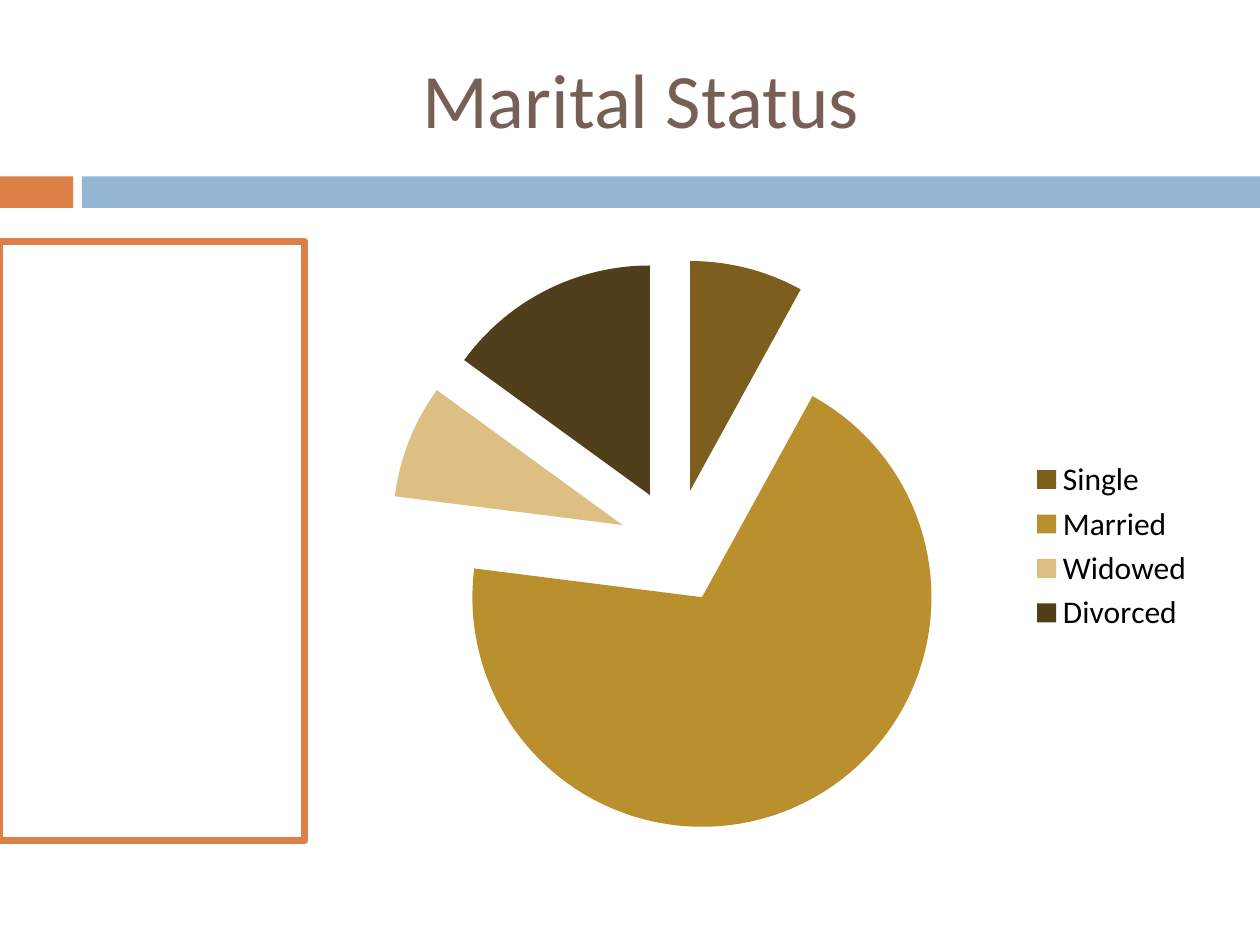
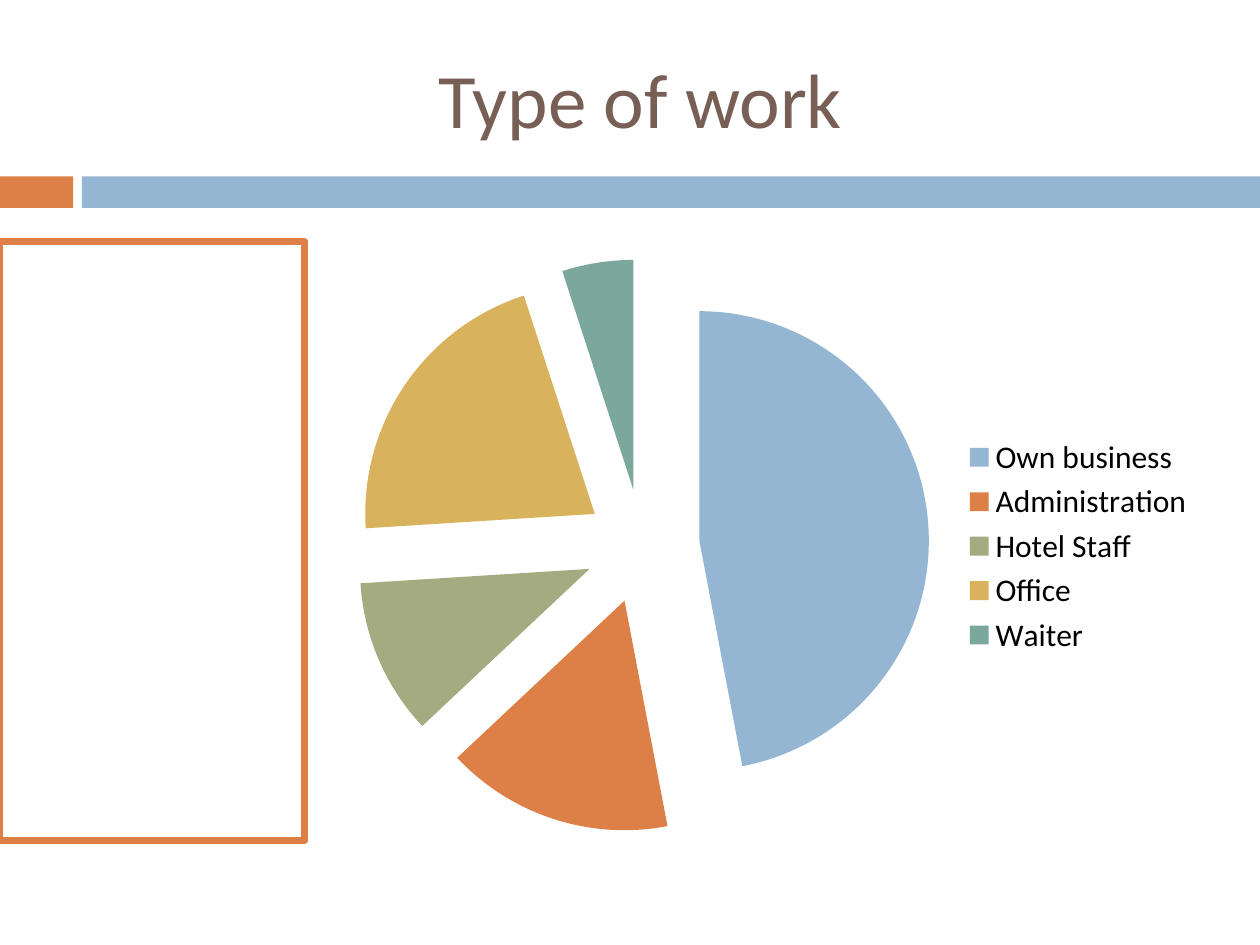
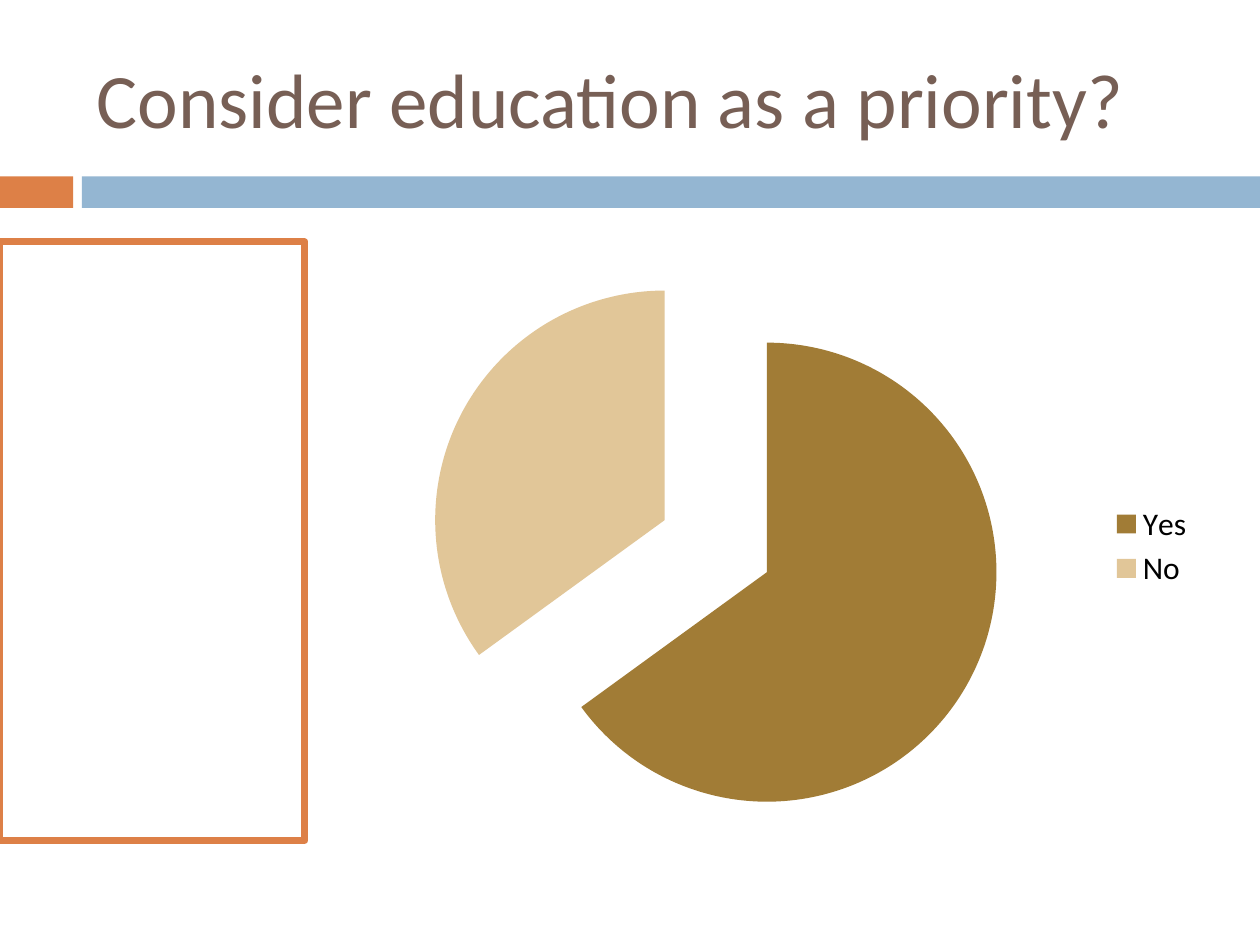
from dataclasses import dataclass

import lxml.etree
import pptx
import pptx.chart.data
import pptx.chart.series
import pptx.dml.color
import pptx.enum.chart
import pptx.enum.shapes
import pptx.enum.text
import pptx.oxml.ns
import pptx.shapes.autoshape
import pptx.slide
import pptx.util
from pptx.util import Inches

FONT = "Calibri"
BROWN, ORANGE, BLUE, BLACK = "775F55", "DD8047", "94B6D2", "000000"
CENTER = pptx.enum.text.PP_ALIGN.CENTER
LEFT = pptx.enum.text.PP_ALIGN.LEFT


@dataclass
class Area:
    left: float
    top: float
    width: float
    height: float

    def lengths(self) -> tuple[int, ...]:
        return tuple(map(Inches, (self.left, self.top, self.width, self.height)))


@dataclass
class Slice:
    label: str
    percent: int
    color: str


@dataclass
class PiePage:
    title: str
    slices: list[Slice]
    alignment: pptx.enum.text.PP_ALIGN = CENTER


BANDS = [(Area(0, 1.4, 0.58, 0.25), ORANGE), (Area(0.65, 1.4, 9.35, 0.25), BLUE)]
TITLE_AREA = Area(0.67, 0.3, 8.83, 0.95)
PANEL_AREA = Area(0, 1.92, 2.42, 4.75)
CHART_AREA = Area(2.58, 1.92, 7, 4.83)

PAGES = [
    PiePage("Marital Status", [
        Slice("Single", 8, "7C5F1E"),
        Slice("Married", 69, "BA8F2D"),
        Slice("Widowed", 8, "DDBF84"),
        Slice("Divorced", 15, "513E1B"),
    ]),
    PiePage("Type of work", [
        Slice("Own business", 47, BLUE),
        Slice("Administration", 16, ORANGE),
        Slice("Hotel Staff", 11, "A5AB81"),
        Slice("Office", 21, "D8B25C"),
        Slice("Waiter", 5, "7BA79D"),
    ]),
    PiePage("Consider education as a priority?", [
        Slice("Yes", 65, "A17C36"),
        Slice("No", 35, "E1C698"),
    ], LEFT),
]


def rgb(color: str) -> pptx.dml.color.RGBColor:
    return pptx.dml.color.RGBColor.from_string(color)


def style_font(font, size: float, color: str) -> None:
    font.name = FONT
    font.size = pptx.util.Pt(size)
    font.color.rgb = rgb(color)


def add_rectangle(page: pptx.slide.Slide, area: Area) -> pptx.shapes.autoshape.Shape:
    kind = pptx.enum.shapes.MSO_SHAPE.RECTANGLE
    box = page.shapes.add_shape(kind, *area.lengths())
    box.shadow.inherit = False
    return box


def add_band(page: pptx.slide.Slide, area: Area, color: str) -> None:
    band = add_rectangle(page, area)
    band.fill.solid()
    band.fill.fore_color.rgb = rgb(color)
    band.line.fill.background()


def add_panel(page: pptx.slide.Slide) -> None:
    panel = add_rectangle(page, PANEL_AREA)
    panel.fill.background()
    panel.line.color.rgb = rgb(ORANGE)
    panel.line.width = pptx.util.Pt(4)


def add_title(page: pptx.slide.Slide, title: str, alignment: pptx.enum.text.PP_ALIGN) -> None:
    frame = page.shapes.add_textbox(*TITLE_AREA.lengths()).text_frame
    frame.word_wrap = True
    frame.vertical_anchor = pptx.enum.text.MSO_ANCHOR.MIDDLE
    para = frame.paragraphs[0]
    para.text = title
    para.alignment = alignment
    style_font(para.font, 44, BROWN)


def explode(series: pptx.chart.series.PieSeries, percent: int) -> None:
    """Pull every slice out from the centre; the element belongs right after c:tx."""
    explosion = lxml.etree.Element(pptx.oxml.ns.qn("c:explosion"), val=str(percent))
    series._element.find(pptx.oxml.ns.qn("c:tx")).addnext(explosion)


def add_pie(page: pptx.slide.Slide, slices: list[Slice]) -> None:
    data = pptx.chart.data.CategoryChartData()
    data.categories = [piece.label for piece in slices]
    data.add_series("Series 1", [piece.percent for piece in slices])
    kind = pptx.enum.chart.XL_CHART_TYPE.PIE
    chart = page.shapes.add_chart(kind, *CHART_AREA.lengths(), data).chart

    style_font(chart.font, 18, BLACK)
    chart.has_title = False
    chart.has_legend = True
    chart.legend.position = pptx.enum.chart.XL_LEGEND_POSITION.RIGHT
    chart.legend.include_in_layout = False

    plot = chart.plots[0]
    plot.vary_by_categories = True
    series = plot.series[0]
    explode(series, 25)
    for index, piece in enumerate(slices):
        look = series.points[index].format
        look.fill.solid()
        look.fill.fore_color.rgb = rgb(piece.color)
        look.line.fill.background()


def main() -> None:
    deck = pptx.Presentation()
    deck.slide_width, deck.slide_height = Inches(10), Inches(7.5)
    blank = deck.slide_layouts[6]
    for content in PAGES:
        page = deck.slides.add_slide(blank)
        # Shared frame: bands, title and side panel
        for area, color in BANDS:
            add_band(page, area, color)
        add_title(page, content.title, content.alignment)
        add_panel(page)
        # Survey result
        add_pie(page, content.slices)
    deck.save("out.pptx")


if __name__ == "__main__":
    main()
